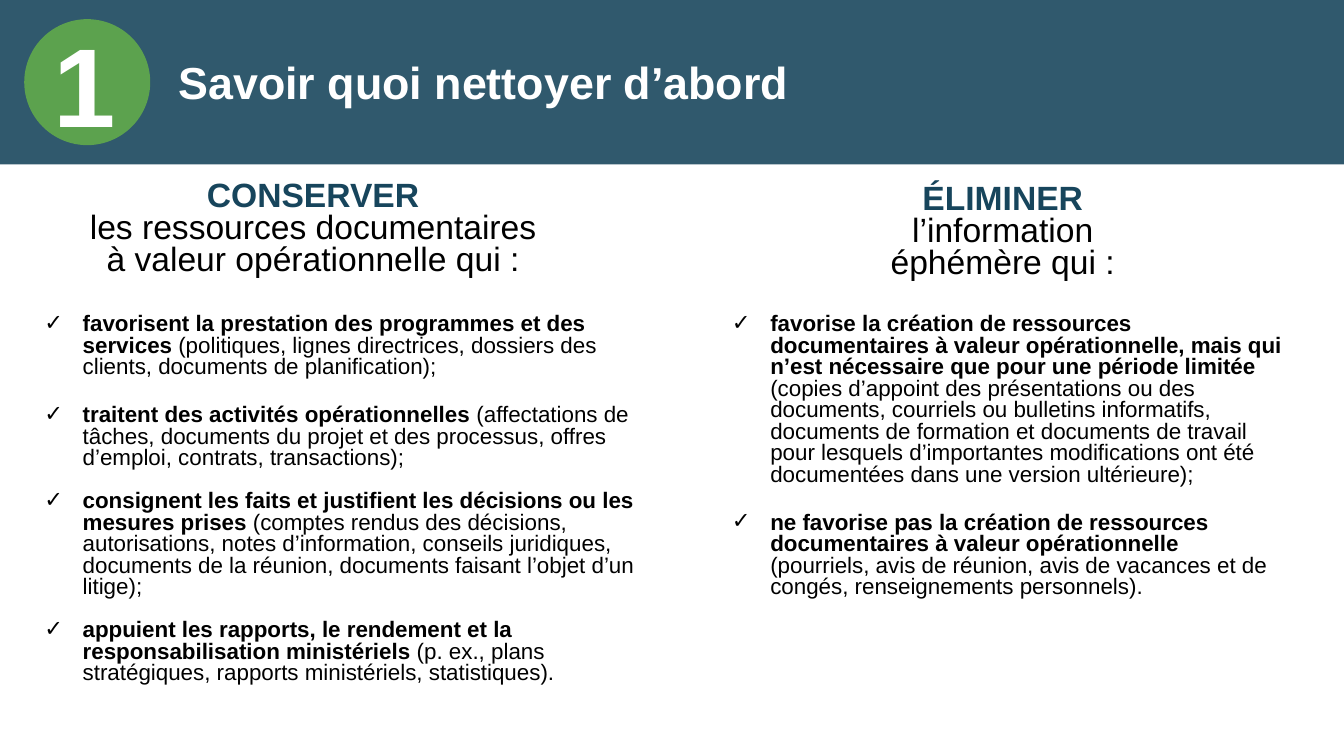
import pptx
import pptx.dml.color
import pptx.enum.shapes
import pptx.enum.text
import pptx.oxml
import pptx.oxml.ns
import pptx.util
from pptx.util import Inches

NAVY, GREEN, WHITE, BLACK = "17455C", "6BB945", "FFFFFF", "000000"
ALIGN = pptx.enum.text.PP_ALIGN
ANCHOR = pptx.enum.text.MSO_ANCHOR
SHAPE = pptx.enum.shapes.MSO_SHAPE

HEADS = [
    (1, (0.76, 1.75, 4.69, 1.07), "CONSERVER",
     "les ressources documentaires à valeur opérationnelle qui :"),
    (3, (7.6, 1.78, 4.69, 1.07), "ÉLIMINER",
     "l’information\véphémère qui :"),
]
LISTS = [
    (2, (0.34, 3.07, 6.15, 3.98), [
        (0, "favorisent la prestation des programmes et des services",
         " (politiques, lignes directrices, dossiers des clients, "
         "documents de planification);"),
        (19, "traitent des activités opérationnelles ",
         "(affectations de tâches, documents du projet et des processus, "
         "offres d’emploi, contrats, transactions);"),
        (15.4, "consignent les faits et justifient les décisions ou les mesures prises",
         " (comptes rendus des décisions, autorisations, notes d’information, "
         "conseils juridiques, documents de la réunion, "
         "documents faisant l’objet d’un litige);"),
        (15.4, "appuient les rapports, le rendement et la responsabilisation ministériels",
         " (p. ex., plans stratégiques, rapports ministériels, statistiques)."),
    ]),
    (4, (7.16, 3.07, 5.67, 2.9), [
        (0, "favorise la création de ressources documentaires à valeur "
            "opérationnelle, mais qui n’est nécessaire que pour une période limitée",
         " (copies d’appoint des présentations ou des documents, courriels ou "
         "bulletins informatifs, documents de formation et documents de travail "
         "pour lesquels d’importantes modifications ont été documentées dans "
         "une version ultérieure);"),
        (19, "ne favorise pas la création de ressources documentaires à valeur opérationnelle",
         " (pourriels, avis de réunion, avis de vacances et de congés, "
         "renseignements personnels)."),
    ]),
]


def put(item, values):
    for name, value in values.items():
        setattr(item, name, value)


def paint(target, color):
    target.rgb = pptx.dml.color.RGBColor.from_string(color)


def style(run, size, color, bold):
    put(run.font, {"name": "Arial", "size": pptx.util.Pt(size), "bold": bold})
    paint(run.font.color, color)


def place(shape, box, anchor=ANCHOR.TOP):
    """Move a text shape to its box and return its text frame."""
    put(shape, dict(zip(("left", "top", "width", "height"), map(Inches, box))))
    put(shape.text_frame, {
        "word_wrap": True,
        "auto_size": pptx.enum.text.MSO_AUTO_SIZE.NONE,
        "vertical_anchor": anchor,
    })
    return shape.text_frame


def lines(frame, count):
    return [frame.paragraphs[0]] + [frame.add_paragraph() for _ in range(count - 1)]


def space(para, align, line, before=0):
    put(para, {"alignment": align, "line_spacing": line,
               "space_before": pptx.util.Pt(before),
               "space_after": pptx.util.Pt(0)})


def tick(para):
    props = para._p.get_or_add_pPr()
    props.set("marL", str(Inches(0.38)))
    props.set("indent", str(-Inches(0.38)))
    for tag, key, value in (("buFont", "typeface", "Arial"), ("buChar", "char", "✓")):
        props.append(pptx.oxml.parse_xml(
            f'<a:{tag} {pptx.oxml.ns.nsdecls("a")} {key}="{value}"/>'))


def add_head(shape, box, texts):
    paras = lines(place(shape, box), len(texts))
    for para, text, color, bold in zip(paras, texts, (NAVY, BLACK), (True, False)):
        para.text = text
        space(para, ALIGN.CENTER, 0.8)
        for run in para.runs:
            style(run, 24, color, bold)


def add_list(shape, box, items):
    paras = lines(place(shape, box), len(items))
    for para, (gap, *parts) in zip(paras, items):
        tick(para)
        space(para, ALIGN.LEFT, 0.8, gap)
        for text, bold in zip(parts, (True, False)):
            run = para.add_run()
            run.text = text
            style(run, 16, BLACK, bold)


def add_block(slide, kind, box, color, alpha):
    block = slide.shapes.add_shape(kind, *map(Inches, box))
    block.shadow.inherit = False
    block.line.fill.background()
    block.fill.solid()
    paint(block.fill.fore_color, color)
    tint = block.element.spPr.find(".//" + pptx.oxml.ns.qn("a:srgbClr"))
    tint.append(pptx.oxml.parse_xml(
        f'<a:alpha {pptx.oxml.ns.nsdecls("a")} val="{alpha * 1000}"/>'))


def add_label(shape, box, text, size, line, anchor):
    para = place(shape, box, anchor).paragraphs[0]
    run = para.add_run()
    run.text = text
    style(run, size, WHITE, True)
    space(para, ALIGN.LEFT, line)


def main():
    deck = pptx.Presentation()
    put(deck, {"slide_width": Inches(13.33), "slide_height": Inches(7.5)})
    slide = deck.slides.add_slide(deck.slide_layouts.get_by_name("Comparison"))
    holders = {shape.placeholder_format.idx: shape for shape in slide.placeholders}
    for idx, box, *texts in HEADS:
        add_head(holders[idx], box, texts)
    for idx, box, items in LISTS:
        add_list(holders[idx], box, items)
    add_block(slide, SHAPE.RECTANGLE, (0, -0.01, 13.33, 1.64), NAVY, 89)
    add_block(slide, SHAPE.OVAL, (0.24, 0.19, 1.25, 1.25), GREEN, 76)
    box = (0.43, 0.1, 0.92, 1.45)
    number = slide.shapes.add_textbox(*map(Inches, box))
    add_label(number, box, "1", 80, 1.0, ANCHOR.TOP)
    title = slide.shapes.title
    add_label(title, (1.67, 0.22, 9.73, 0.91), "Savoir quoi nettoyer d’abord",
              32, 0.9, ANCHOR.BOTTOM)
    title.element.getparent().append(title.element)
    deck.save("out.pptx")


if __name__ == "__main__":
    main()
